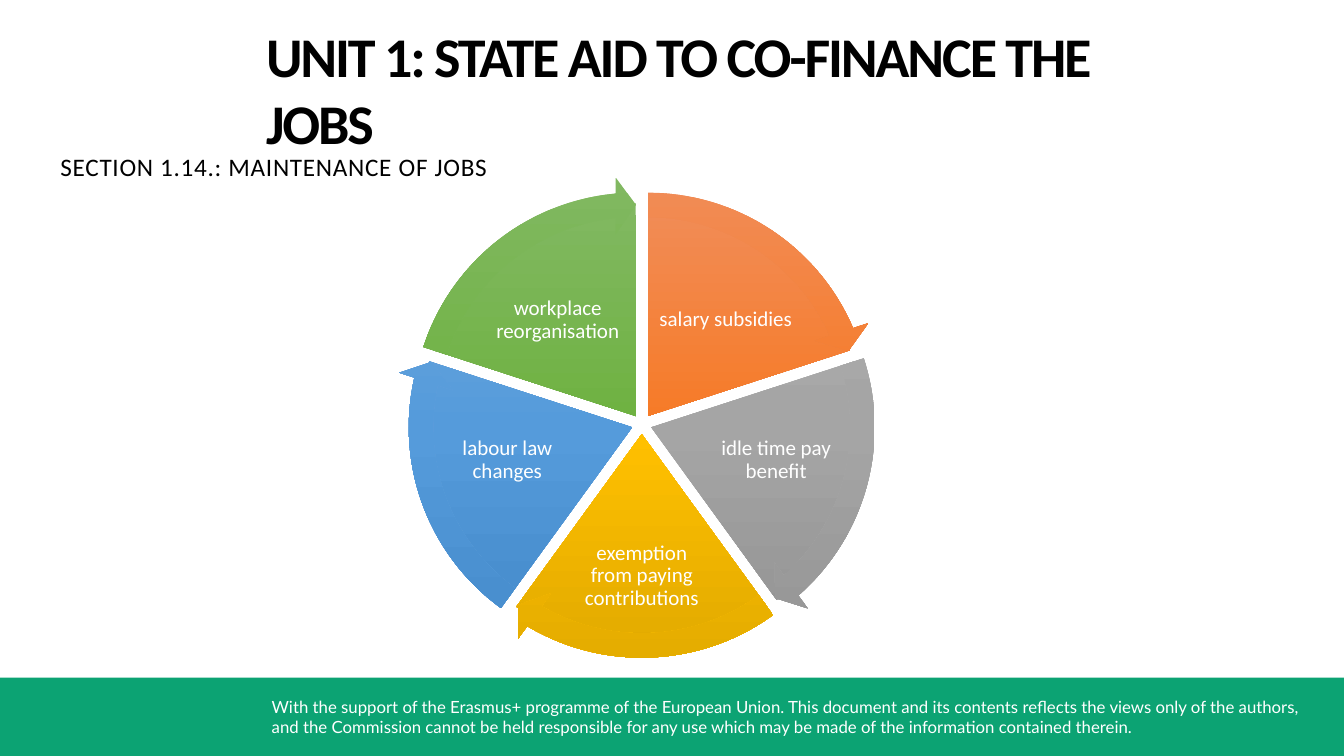
from copy import deepcopy
from math import cos, radians, sin

from pptx import Presentation
from pptx.dml.color import RGBColor
from pptx.enum.shapes import MSO_SHAPE as SHAPE
from pptx.enum.text import MSO_ANCHOR as ANCHOR, MSO_AUTO_SIZE as AUTO, PP_ALIGN as ALIGN
from pptx.oxml.ns import qn
from pptx.util import Pt

COLORS = {"band": "0CA373", "white": "FFFFFF", "black": "000000"}
CENTER_X, CENTER_Y = 458.4, 303
PIE_SIZE, ARROW_SIZE, EXPLODE = 304.6, 342, 7.2
STEP, FIRST_ANGLE = 72, 270
ANGLE_UNIT = 0.6
HEAD_ANGLE = 3.275

SLICES = [
    ("salary subsidies", ("F18C57", "F67B28", "E56C19"), (60, -74.4), (98, 65.5)),
    ("idle time pay benefit", ("AFAFAF", "A5A5A5", "939393"), (96, 25.7), (90.7, 72.7)),
    ("exemption from paying contributions", ("FFC64B", "FFC000", "E3AB00"), (0, 108.5), (87, 80)),
    ("labour law changes", ("71A6DB", "559BDB", "448ACA"), (-96, 25.7), (90.7, 72.7)),
    ("workplace reorganisation", ("81B861", "6FB242", "62A336"), (-60, -74.4), (98, 65.5)),
]

TITLE = "UNIT 1: STATE AID TO CO-FINANCE THE JOBS"
SECTION = "SECTION 1.14.: MAINTENANCE OF JOBS"
DISCLAIMER = (
    "With the support of the Erasmus+ programme of the European Union. "
    "This document and its contents reflects the views only of the authors, "
    "and the Commission cannot be held responsible for any use which may be made "
    "of the information contained therein."
)


def rgb(name):
    return RGBColor.from_string(COLORS.get(name, name))


def write_text(box, text, size, color, font="Calibri", bold=False, align=ALIGN.LEFT,
               anchor=ANCHOR.TOP, margin=None, tracking=0):
    frame = box.text_frame
    frame.text = text
    frame.word_wrap = True
    frame.auto_size = AUTO.NONE
    frame.vertical_anchor = anchor
    if margin is not None:
        frame.margin_left = frame.margin_right = Pt(margin)
        frame.margin_top = frame.margin_bottom = Pt(margin)
    paragraph = frame.paragraphs[0]
    paragraph.alignment = align
    paragraph.font.name = font
    paragraph.font.size = Pt(size)
    paragraph.font.bold = bold
    paragraph.font.color.rgb = rgb(color)
    if tracking:
        paragraph.runs[0]._r.get_or_add_rPr().set("spc", str(int(tracking * 100)))
    return paragraph


def add_text(slide, area, text, size, color, **style):
    box = slide.shapes.add_textbox(*map(Pt, area))
    return write_text(box, text, size, color, **style)


def add_title(slide):
    title = slide.shapes.title
    title.left, title.top, title.width, title.height = map(Pt, (190, 15.5, 646.6, 49.7))
    write_text(title, TITLE, 40, "black", bold=True, margin=0, tracking=-1.5)


def add_footer(slide):
    band = slide.shapes.add_shape(SHAPE.RECTANGLE, *map(Pt, (0, 484, 960, 56)))
    band.shadow.inherit = False
    band.fill.solid()
    band.fill.fore_color.rgb = rgb("band")
    band.line.fill.background()
    add_text(slide, (187, 494, 750, 36), DISCLAIMER, 12, "white", font="Lato")


def fill_gradient(shape, tones):
    shape.fill.gradient()
    shape.fill.gradient_angle = 270
    stop_list = shape._element.spPr.find(".//" + qn("a:gsLst"))
    stop_list.insert(1, deepcopy(stop_list[0]))
    for stop, position, tone in zip(shape.fill.gradient_stops, (0, 0.5, 1), tones):
        stop.position = position
        stop.color.rgb = rgb(tone)


def add_wheel_part(slide, kind, size, index, tones, adjustments):
    middle = radians(FIRST_ANGLE + STEP * (index + 0.5))
    left = CENTER_X + EXPLODE * cos(middle) - size / 2
    top = CENTER_Y + EXPLODE * sin(middle) - size / 2
    part = slide.shapes.add_shape(kind, Pt(left), Pt(top), Pt(size), Pt(size))
    part.shadow.inherit = False
    part.line.fill.background()
    fill_gradient(part, tones)
    for position, value in enumerate(adjustments):
        part.adjustments[position] = value


def slice_angles(index):
    start = (FIRST_ANGLE + STEP * index) % 360
    return start * ANGLE_UNIT, (start + STEP) % 360 * ANGLE_UNIT


def add_slice(slide, index, label, tones, offset, size):
    add_wheel_part(slide, SHAPE.PIE, PIE_SIZE, index, tones, slice_angles(index))
    (dx, dy), (width, height) = offset, size
    area = (CENTER_X + dx - width / 2, CENTER_Y + dy - height / 2, width, height)
    paragraph = add_text(slide, area, label, 15, "white", align=ALIGN.CENTER,
                         anchor=ANCHOR.MIDDLE, margin=1.5)
    paragraph.line_spacing = 0.9


def add_arrow(slide, index, tones):
    start, end = slice_angles(index)
    adjustments = (0.051, HEAD_ANGLE, end - HEAD_ANGLE, start, 0.059)
    add_wheel_part(slide, SHAPE.CIRCULAR_ARROW, ARROW_SIZE, index, tones, adjustments)


def main():
    """Build the slide on maintenance of jobs and save it."""
    deck = Presentation()
    deck.slide_width, deck.slide_height = Pt(960), Pt(540)
    slide = deck.slides.add_slide(deck.slide_layouts[5])
    add_footer(slide)
    for index, (label, tones, offset, size) in enumerate(SLICES):
        add_slice(slide, index, label, tones, offset, size)
    for index, (_, tones, _, _) in enumerate(SLICES):
        add_arrow(slide, index, tones)
    add_title(slide)
    add_text(slide, (36, 104.8, 479.5, 29), SECTION, 18, "black", tracking=0.5)
    deck.save("out.pptx")


if __name__ == "__main__":
    main()
